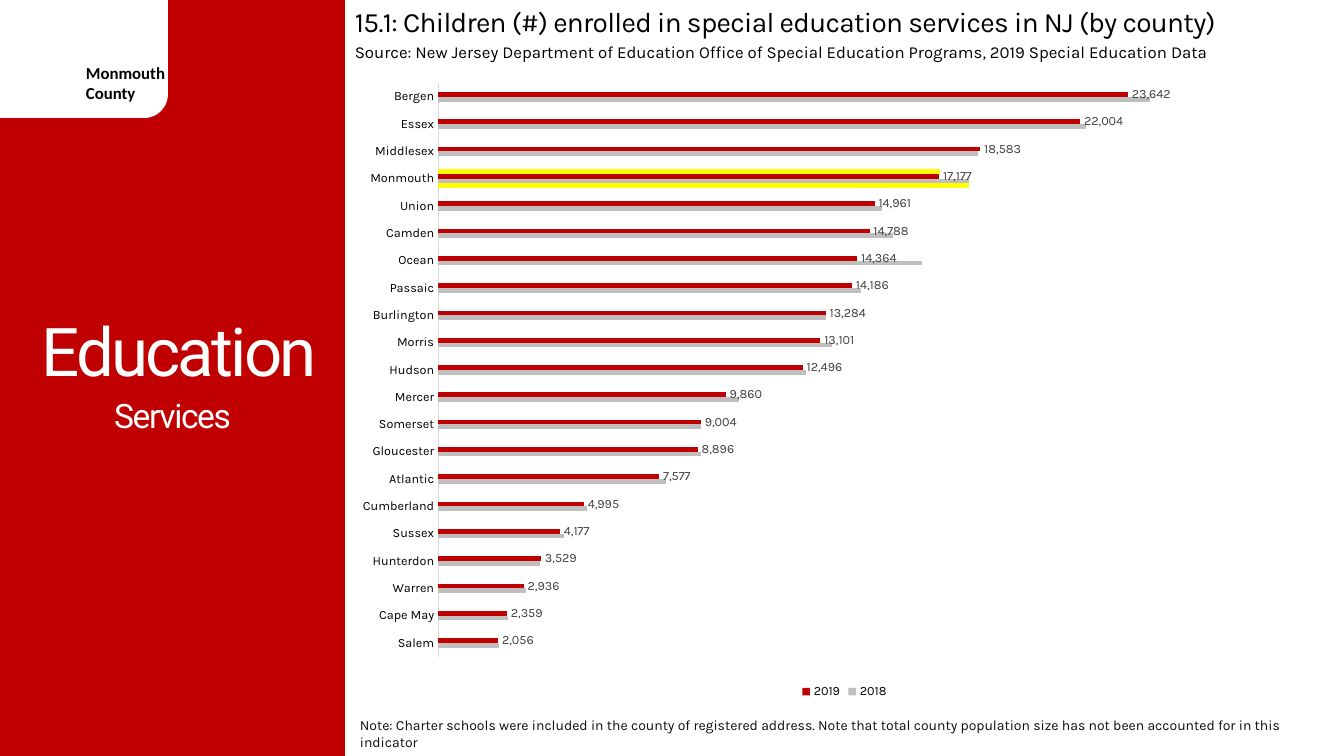
from lxml.etree import SubElement
from pptx import Presentation
from pptx.chart.data import CategoryChartData as ChartData
from pptx.dml.color import RGBColor
from pptx.enum.chart import XL_CHART_TYPE as Kind, XL_LABEL_POSITION as Spot
from pptx.enum.chart import XL_LEGEND_POSITION as Side, XL_TICK_MARK as Tick
from pptx.enum.shapes import MSO_SHAPE as Shape
from pptx.enum.text import MSO_ANCHOR as Anchor, PP_ALIGN as Align
from pptx.oxml.ns import qn
from pptx.util import Inches, Pt

RED, WHITE, BLACK = "C00000", "FFFFFF", "000000"
GREY, YELLOW = "BFBFBF", "FFFF00"

TITLE = "15.1: Children (#) enrolled in special education services in NJ (by county)"
SOURCE = ("Source: New Jersey Department of Education Office of Special Education "
          "Programs, 2019 Special Education Data")
NOTE = ("Note: Charter schools were included in the county of registered address. "
        "Note that total county population size has not been accounted for in this indicator")

# county, 2018, 2019
ROWS = [
    ("Salem", 2100, 2056), ("Cape May", 2400, 2359), ("Warren", 3000, 2936),
    ("Hunterdon", 3500, 3529), ("Sussex", 4300, 4177), ("Cumberland", 5100, 4995),
    ("Atlantic", 7800, 7577), ("Gloucester", 9000, 8896), ("Somerset", 9000, 9004),
    ("Mercer", 10300, 9860), ("Hudson", 12600, 12496), ("Morris", 13500, 13101),
    ("Burlington", 13300, 13284), ("Passaic", 14500, 14186), ("Ocean", 16600, 14364),
    ("Camden", 15600, 14788), ("Union", 15200, 14961), ("Monmouth", 18200, 17177),
    ("Middlesex", 18500, 18583), ("Essex", 22200, 22004), ("Bergen", 24400, 23642),
]
FOCUS, BELOW, ABOVE = "Monmouth", 18200, 17200
PLOT = {"x": 0.084, "y": 0.024, "w": 0.896, "h": 0.903}

PX = Inches(7.5) / 756


def px(*nums):
    return [round(n * PX) for n in nums]


def hue(code):
    return RGBColor.from_string(code)


def style(font, size, face="Karla", color=BLACK, bold=False):
    font.size, font.name, font.bold = Pt(size), face, bold
    font.color.rgb = hue(color)


def panel(kind, box, color):
    item = slide.shapes.add_shape(kind, *px(*box))
    item.shadow.inherit = False
    item.fill.solid()
    item.fill.fore_color.rgb = hue(color)
    item.line.fill.background()


def write(text, box, size, track=0, align=Align.LEFT, lead=None, anchor=Anchor.TOP, **look):
    """Add a text box; track is the letter spacing in points."""
    frame = slide.shapes.add_textbox(*px(*box)).text_frame
    frame.word_wrap, frame.vertical_anchor = True, anchor
    para = frame.paragraphs[0]
    para.alignment, para.line_spacing = align, lead
    run = para.add_run()
    run.text = text
    style(run.font, size, **look)
    if track:
        run.font._element.set("spc", str(round(track * 100)))


def fix_plot(chart):
    """Pin the inner plot area to the PLOT fractions."""
    area = chart._chartSpace.chart.plotArea
    old = area.find(qn("c:layout"))
    if old is not None:
        area.remove(old)
    layout = SubElement(area, qn("c:layout"))
    area.insert(0, layout)
    manual = SubElement(layout, qn("c:manualLayout"))
    marks = {"layoutTarget": "inner", "xMode": "edge", "yMode": "edge", **PLOT}
    for tag, val in marks.items():
        SubElement(manual, qn("c:" + tag)).set("val", str(val))


def hide_keys(legend, keys):
    """Leave the given series out of the legend."""
    for spot, key in enumerate(keys, 1):
        entry = SubElement(legend._element, qn("c:legendEntry"))
        SubElement(entry, qn("c:idx")).set("val", str(key))
        SubElement(entry, qn("c:delete")).set("val", "1")
        legend._element.insert(spot, entry)


def draw_chart(box):
    names, past, now = zip(*ROWS)
    series = [
        ("Series 1", [BELOW if n == FOCUS else None for n in names], YELLOW),
        ("2018", past, GREY),
        ("2019", now, RED),
        ("Series 4", [ABOVE if n == FOCUS else None for n in names], YELLOW),
    ]
    data = ChartData(number_format="#,##0")
    data.categories = names
    for name, vals, _ in series:
        data.add_series(name, vals)
    chart = slide.shapes.add_chart(Kind.BAR_CLUSTERED, *px(*box), data).chart
    style(chart.font, 10, face="Calibri")
    chart.has_title = False

    plot = chart.plots[0]
    plot.gap_width, plot.overlap, plot.vary_by_categories = 182, 0, False
    for bar, (_, _, color) in zip(plot.series, series):
        bar.format.fill.solid()
        bar.format.fill.fore_color.rgb = hue(color)
        bar.invert_if_negative = False
    tags = plot.series[2].data_labels
    tags.show_value, tags.position = True, Spot.OUTSIDE_END
    tags.number_format, tags.number_format_is_linked = "#,##0", False
    style(tags.font, 9, color="404040")

    cats, vals = chart.category_axis, chart.value_axis
    cats.major_tick_mark = cats.minor_tick_mark = Tick.NONE
    cats.format.line.color.rgb = hue("D9D9D9")
    cats.format.line.width = Pt(0.75)
    style(cats.tick_labels.font, 9)
    vals.minimum_scale, vals.maximum_scale = 0, 30000
    vals.has_major_gridlines = vals.visible = False

    chart.has_legend = True
    chart.legend.position, chart.legend.include_in_layout = Side.BOTTOM, False
    style(chart.legend.font, 9)
    hide_keys(chart.legend, (0, 3))
    fix_plot(chart)


deck = Presentation()
deck.slide_width, deck.slide_height = px(1344, 756)
slide = deck.slides.add_slide(deck.slide_layouts[6])

panel(Shape.RECTANGLE, (0, 0, 345, 756), RED)
panel(Shape.ROUNDED_RECTANGLE, (-34, -25, 202, 143), WHITE)
write("Monmouth County", (76, 58, 109, 50), 12, face="Calibri", bold=True)
side = {"face": "Roboto", "color": WHITE, "align": Align.CENTER, "lead": 0.9}
write("Education", (0, 76, 358, 558), 48, track=-2, anchor=Anchor.MIDDLE, **side)
write("Services", (0, 395, 345, 46), 24, track=-1, **side)
write(TITLE, (345, 0, 994, 44), 20, track=-0.5)
write(SOURCE, (345, 37, 926, 30), 12)
write(NOTE, (350, 712, 994, 27), 10, color="0D0D0D")
draw_chart((356, 68, 977, 635))

deck.save("out.pptx")
